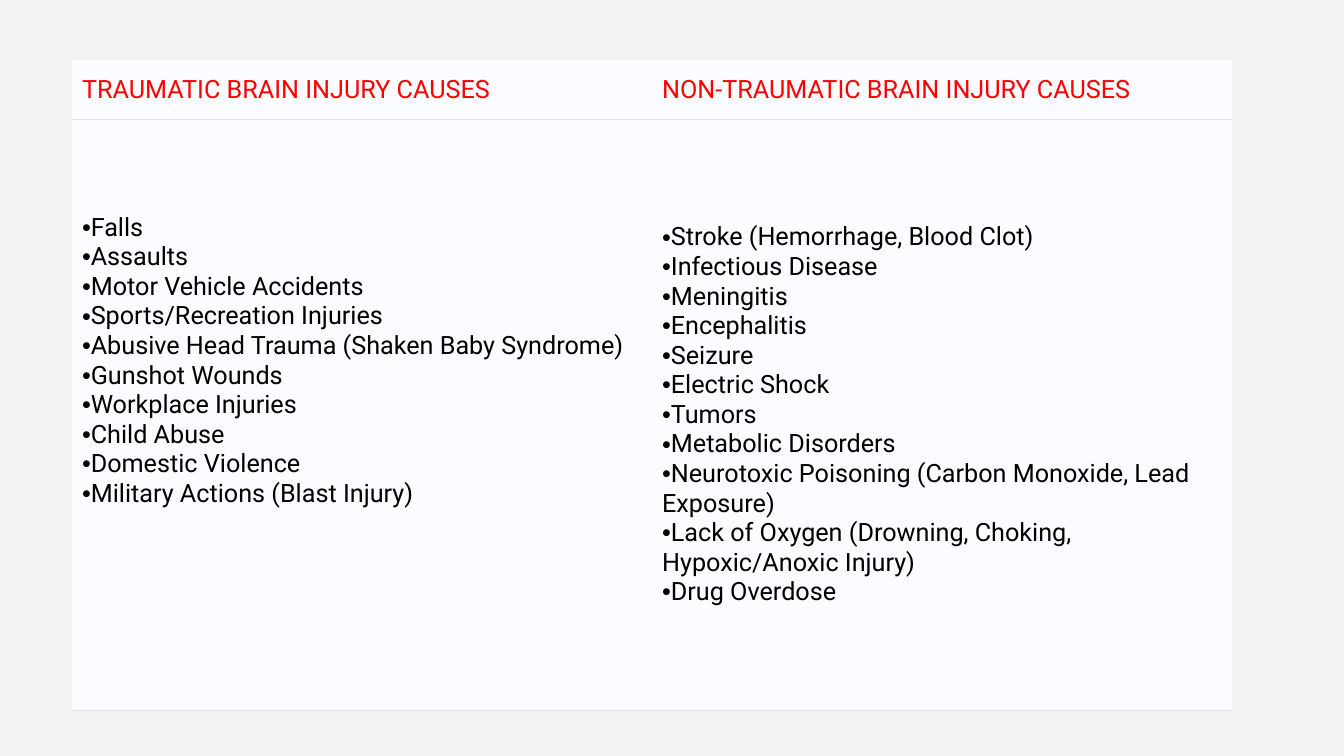
from dataclasses import dataclass

from lxml.etree import SubElement
from pptx import Presentation
from pptx.dml.color import RGBColor as RGB
from pptx.enum.text import MSO_ANCHOR as Anchor
from pptx.oxml import parse_xml
from pptx.oxml.ns import nsdecls, qn
from pptx.util import Pt

CAUSES = {
    "TRAUMATIC BRAIN INJURY CAUSES": [
        "Falls",
        "Assaults",
        "Motor Vehicle Accidents",
        "Sports/Recreation Injuries",
        "Abusive Head Trauma (Shaken Baby Syndrome)",
        "Gunshot Wounds",
        "Workplace Injuries",
        "Child Abuse",
        "Domestic Violence",
        "Military Actions (Blast Injury)",
    ],
    "NON-TRAUMATIC BRAIN INJURY CAUSES": [
        "Stroke (Hemorrhage, Blood Clot)",
        "Infectious Disease",
        "Meningitis",
        "Encephalitis",
        "Seizure",
        "Electric Shock",
        "Tumors",
        "Metabolic Disorders",
        "Neurotoxic Poisoning (Carbon Monoxide, Lead Exposure)",
        "Lack of Oxygen (Drowning, Choking, Hypoxic/Anoxic Injury)",
        "Drug Overdose",
    ],
}


@dataclass(frozen=True)
class Theme:
    background: RGB = RGB(0xF2, 0xF2, 0xF2)
    panel: RGB = RGB(0xFA, 0xFC, 0xFF)
    heading: RGB = RGB(0xFF, 0x00, 0x00)
    body: RGB = RGB(0x00, 0x00, 0x00)
    rule: RGB = RGB(0xDF, 0xE5, 0xE9)
    rule_width: float = 0.75
    font: str = "Roboto"
    bullet_font: str = "Arial"
    size: float = 18


THEME = Theme()
SLIDE_WIDTH, SLIDE_HEIGHT = 960, 540
TABLE_LEFT, TABLE_TOP = 51.4, 42.8
COLUMN_WIDTH = 414.4
HEADER_HEIGHT, BODY_HEIGHT = 42.5, 422
LEFT_LIST_INSET = 66.8


def set_borders(cell, ruled_sides):
    """Rule the given sides (L, R, T, B) and clear the others."""
    properties = cell._tc.get_or_add_tcPr()
    for index, side in enumerate("LRTB"):
        if side in ruled_sides:
            width = Pt(THEME.rule_width)
            fill = f'<a:solidFill><a:srgbClr val="{THEME.rule}"/></a:solidFill>'
        else:
            width, fill = 0, "<a:noFill/>"
        line = f'<a:ln{side} {nsdecls("a")} w="{width}">{fill}</a:ln{side}>'
        properties.insert(index, parse_xml(line))


def add_bullet(para):
    properties = para._p.get_or_add_pPr()
    properties.set("marL", "0")
    properties.set("indent", "0")
    bullet_font = SubElement(properties, qn("a:buFont"))
    bullet_font.set("typeface", THEME.bullet_font)
    SubElement(properties, qn("a:buChar")).set("char", "•")
    # Bullet elements must precede the default run properties.
    properties.append(properties.find(qn("a:defRPr")))


def fill_cell(cell, lines, color, ruled_sides, bulleted=False):
    cell.fill.solid()
    cell.fill.fore_color.rgb = THEME.panel
    set_borders(cell, ruled_sides)
    cell.vertical_anchor = Anchor.MIDDLE
    frame = cell.text_frame
    frame.text = "\n".join(lines)
    for para in frame.paragraphs:
        para.font.name = THEME.font
        para.font.size = Pt(THEME.size)
        para.font.color.rgb = color
        if bulleted:
            add_bullet(para)


def add_causes_table(page):
    table = page.shapes.add_table(
        2, len(CAUSES), Pt(TABLE_LEFT), Pt(TABLE_TOP),
        Pt(COLUMN_WIDTH * len(CAUSES)), Pt(HEADER_HEIGHT + BODY_HEIGHT),
    ).table
    table.first_row = table.horz_banding = False
    for row, height in zip(table.rows, (HEADER_HEIGHT, BODY_HEIGHT)):
        row.height = Pt(height)
    for index, (heading, causes) in enumerate(CAUSES.items()):
        table.columns[index].width = Pt(COLUMN_WIDTH)
        fill_cell(table.cell(0, index), [heading], THEME.heading, "B")
        fill_cell(table.cell(1, index), causes, THEME.body, "TB", bulleted=True)
    left_list = table.cell(1, 0)
    left_list.vertical_anchor = Anchor.TOP
    left_list.margin_top = Pt(LEFT_LIST_INSET)


def main():
    deck = Presentation()
    deck.slide_width, deck.slide_height = Pt(SLIDE_WIDTH), Pt(SLIDE_HEIGHT)
    page = deck.slides.add_slide(deck.slide_layouts.get_by_name("Blank"))
    page.background.fill.solid()
    page.background.fill.fore_color.rgb = THEME.background
    add_causes_table(page)
    deck.save("out.pptx")


if __name__ == "__main__":
    main()
